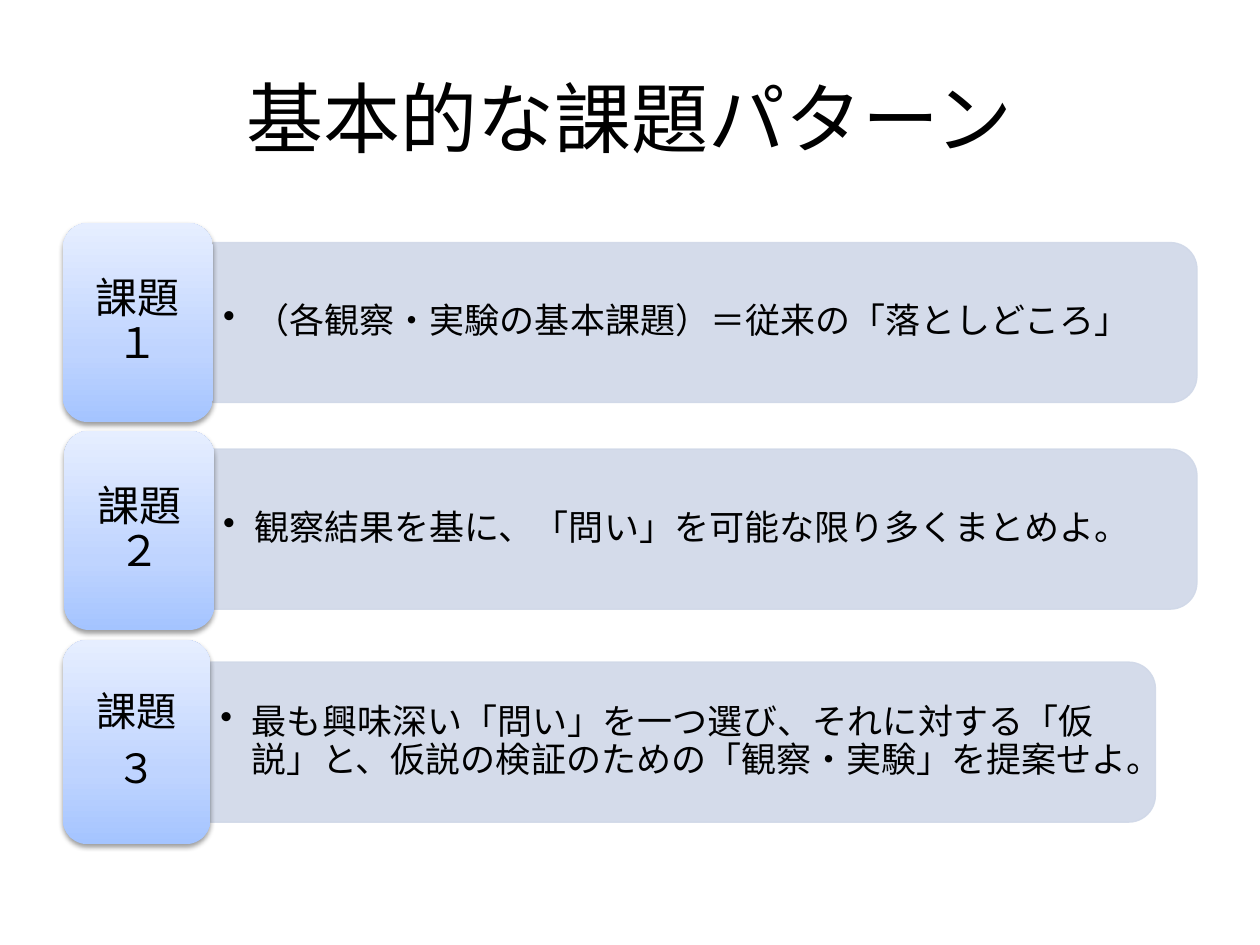
from lxml import etree
from pptx import Presentation
from pptx.dml.color import RGBColor
from pptx.enum.shapes import MSO_SHAPE as Shape
from pptx.enum.text import MSO_ANCHOR as Anchor, PP_ALIGN as Align
from pptx.oxml import parse_xml
from pptx.oxml.ns import qn
from pptx.util import Inches, Pt

COLORS = {"text": "000000", "panel": "D0D8E8", "shadow": "000000"}
GRADIENT = {0: "A4C4FF", 35: "BFD4FF", 100: "E6EEFF"}
DRAWING_NS = "http://schemas.openxmlformats.org/drawingml/2006/main"
PANEL_HEIGHT = 1.27
CARD_MARGIN = 0.06


class SlideBuilder:
    font = "Roboto"

    def __init__(self, page):
        self.page = page

    def text(self, left, top, width, height, lines, size, align=Align.LEFT,
             insets=(0.1, 0.05), spacing=None, after=0, bullet=False):
        box = self.page.shapes.add_textbox(
            Inches(left), Inches(top), Inches(width), Inches(height))
        frame = box.text_frame
        frame.word_wrap = True
        frame.vertical_anchor = Anchor.MIDDLE
        frame.margin_left = frame.margin_right = Inches(insets[0])
        frame.margin_top = frame.margin_bottom = Inches(insets[1])
        frame.text = "\n".join(lines)
        for para in frame.paragraphs:
            para.alignment = align
            para.line_spacing = spacing
            para.space_after = Pt(after)
            if bullet:
                self.bullet(para)
            for span in para.runs:
                span.font.name = self.font
                span.font.size = Pt(size)
                span.font.color.rgb = RGBColor.from_string(COLORS["text"])

    def bullet(self, para):
        para.level = 1
        props = para._p.get_or_add_pPr()
        props.set("marL", str(Inches(0.25)))
        props.set("indent", str(Inches(-0.25)))
        etree.SubElement(props, qn("a:buChar"), char="•")

    def panel(self, left, middle, length):
        shape = self.page.shapes.add_shape(
            Shape.ROUND_2_SAME_RECTANGLE,
            Inches(left + (length - PANEL_HEIGHT) / 2), Inches(middle - length / 2),
            Inches(PANEL_HEIGHT), Inches(length))
        shape.rotation = 90
        shape.shadow.inherit = False
        shape.fill.solid()
        shape.line.width = Pt(0.75)
        for paint in (shape.fill, shape.line.fill):
            paint.solid()
            paint.fore_color.rgb = RGBColor.from_string(COLORS["panel"])
        for color in shape._element.spPr.iter(qn("a:srgbClr")):
            etree.SubElement(color, qn("a:alpha"), val="90000")

    def card(self, left, top, width, height, flipped):
        shape = self.page.shapes.add_shape(
            Shape.ROUNDED_RECTANGLE,
            Inches(left), Inches(top), Inches(width), Inches(height))
        shape.line.fill.background()
        shape.fill.gradient()
        shape.fill.gradient_angle = 90
        props = shape._element.spPr
        stops = props.find(".//" + qn("a:gsLst"))
        for stop in list(stops):
            stops.remove(stop)
        for position, color in GRADIENT.items():
            stop = etree.SubElement(stops, qn("a:gs"), pos=str(position * 1000))
            etree.SubElement(stop, qn("a:srgbClr"), val=color)
        shape.shadow.inherit = False
        props.find(qn("a:effectLst")).append(parse_xml(
            f'<a:outerShdw xmlns:a="{DRAWING_NS}" blurRad="{Pt(3.1)}" '
            f'dist="{Pt(1.6)}" dir="5400000" rotWithShape="0">'
            f'<a:srgbClr val="{COLORS["shadow"]}"><a:alpha val="38000"/>'
            '</a:srgbClr></a:outerShdw>'))
        if flipped:
            props.find(qn("a:xfrm")).set("flipH", "1")

    def task(self, card, labels, label_size, middle, length, description):
        left, top, width, height = card
        edge = 1.69 if len(labels) == 1 else 1.67
        self.panel(edge, middle, length)
        self.text(edge, middle - 0.57, length - 0.06, 1.14, [description], 20,
                  insets=(0.08, 0.04), spacing=0.9, after=3, bullet=True)
        self.card(*card, flipped=len(labels) > 1)
        self.text(left + CARD_MARGIN, top + CARD_MARGIN,
                  width - 2 * CARD_MARGIN, height - 2 * CARD_MARGIN,
                  labels, label_size, Align.CENTER, spacing=0.9, after=8)


TASKS = [
    ((0.5, 1.77, 1.19, 1.58), ["課題１"], 24, 2.56, 7.81,
     "（各観察・実験の基本課題）＝従来の「落としどころ」"),
    ((0.51, 3.42, 1.19, 1.58), ["課題２"], 24, 4.2, 7.81,
     "観察結果を基に、「問い」を可能な限り多くまとめよ。"),
    ((0.5, 5.08, 1.17, 1.62), ["課題", "３"], 23, 5.89, 7.5,
     "最も興味深い「問い」を一つ選び、それに対する「仮説」と、"
     "仮説の検証のための「観察・実験」を提案せよ。"),
]


def main():
    deck = Presentation()
    deck.slide_width = Inches(10)
    deck.slide_height = Inches(7.5)
    builder = SlideBuilder(deck.slides.add_slide(deck.slide_layouts[6]))
    builder.text(0.5, 0.3, 9, 1.25, ["基本的な課題パターン"], 44, Align.CENTER)
    for task in TASKS:
        builder.task(*task)
    deck.save("out.pptx")


if __name__ == "__main__":
    main()
